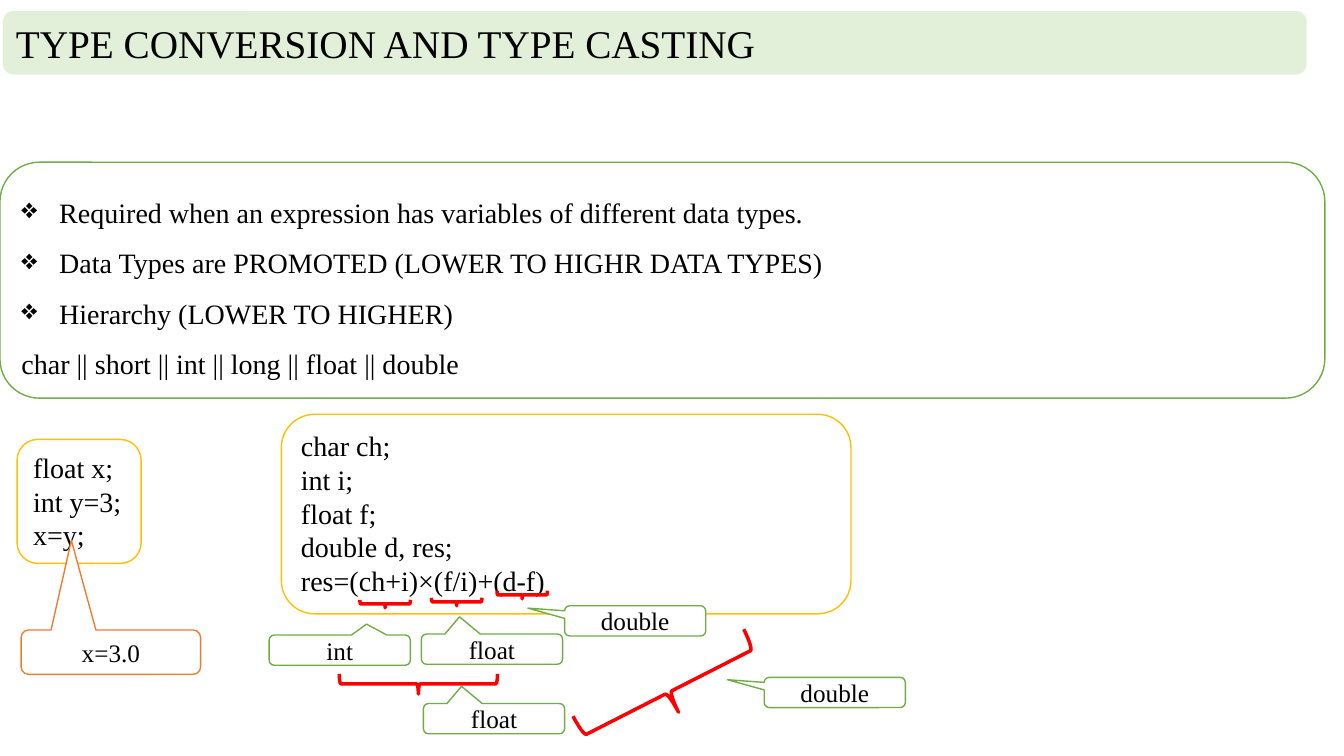
from lxml.etree import SubElement
from pptx import Presentation
from pptx.dml.color import RGBColor
from pptx.enum.shapes import MSO_SHAPE
from pptx.enum.text import MSO_ANCHOR, MSO_AUTO_SIZE, PP_ALIGN
from pptx.oxml.ns import qn
from pptx.util import Inches, Pt

FONT = "Times New Roman"
COLORS = {
    "text": "000000",
    "title": "E2F0D9",
    "callout": "FFFFFF",
    "green": "70AD47",
    "gold": "FFC000",
    "orange": "ED7D31",
    "brace": "FF0000",
}
CALLOUT_SIZE = (14, 3)
RULES = [
    "Required when an expression has variables of different data types.",
    "Data Types are PROMOTED (LOWER TO HIGHR DATA TYPES)",
    "Hierarchy (LOWER TO HIGHER)",
]
HIERARCHY = "char || short || int || long || float || double"
ASSIGNMENT = ["float x;", "int y=3;", "x=y;"]
EXPRESSION = ["char ch;", "int i;", "float f;", "double d, res;",
              "res=(ch+i)×(f/i)+(d-f)"]


def grid(cells):
    """Length of a number of columns or rows, each a tenth of an inch."""
    return Inches(cells / 10)


def color(name):
    return RGBColor.from_string(COLORS[name])


def add_outline(slide, kind, place, fill=None, line=None, weight=1):
    outline = slide.shapes.add_shape(kind, *map(grid, place))
    outline.shadow.inherit = False
    if fill:
        outline.fill.solid()
        outline.fill.fore_color.rgb = color(fill)
    else:
        outline.fill.background()
    if line:
        outline.line.color.rgb = color(line)
        outline.line.width = Pt(weight)
    else:
        outline.line.fill.background()
    return outline


def write(paragraph, text, size=20, align=PP_ALIGN.LEFT, spacing=None, bullet=None):
    paragraph.alignment = align
    if spacing:
        paragraph.line_spacing = spacing
    if bullet:
        properties = paragraph._p.get_or_add_pPr()
        indent = grid(3.75)
        properties.set("marL", str(indent))
        properties.set("indent", str(-indent))
        SubElement(properties, qn("a:buChar")).set("char", bullet)
    run = paragraph.add_run()
    run.text = text
    run.font.name = FONT
    run.font.size = Pt(size)
    run.font.color.rgb = color("text")


def add_panel(slide, place, lines, fill=None, line=None, bullets=0, **text_format):
    """Rounded panel whose first lines, as many as bullets says, are bulleted."""
    panel = add_outline(slide, MSO_SHAPE.FLOWCHART_ALTERNATE_PROCESS,
                        place, fill, line)
    frame = panel.text_frame
    frame.word_wrap = True
    frame.auto_size = MSO_AUTO_SIZE.SHAPE_TO_FIT_TEXT
    frame.vertical_anchor = MSO_ANCHOR.TOP
    for index, text in enumerate(lines):
        paragraph = frame.add_paragraph() if index else frame.paragraphs[0]
        write(paragraph, text, bullet="❖" if index < bullets else None, **text_format)


def add_callout(slide, text, corner, tail, size=CALLOUT_SIZE, line="green"):
    callout = add_outline(slide, MSO_SHAPE.ROUNDED_RECTANGULAR_CALLOUT,
                          (*corner, *size), "callout", line)
    callout.adjustments[0], callout.adjustments[1] = tail
    frame = callout.text_frame
    frame.word_wrap = True
    frame.vertical_anchor = MSO_ANCHOR.MIDDLE
    write(frame.paragraphs[0], text, size=18, align=PP_ALIGN.CENTER)


def add_brace(slide, center, depth, span, rotation=270):
    x, y = center
    brace = add_outline(slide, MSO_SHAPE.LEFT_BRACE,
                        (x - depth / 2, y - span / 2, depth, span),
                        line="brace", weight=2.5)
    brace.rotation = rotation


def main():
    presentation = Presentation()
    presentation.slide_width = Inches(13.33)
    presentation.slide_height = Inches(7.5)
    slide = presentation.slides.add_slide(presentation.slide_layouts[6])

    # Title and conversion rules
    add_panel(slide, (0.3, 1.1, 129.3, 6.3), ["TYPE CONVERSION AND TYPE CASTING"],
              fill="title", size=28)
    add_panel(slide, (0, 16.1, 131.4, 23.4), RULES + [HIERARCHY],
              line="green", bullets=len(RULES), spacing=1.5)

    # Assignment example
    add_panel(slide, (1.7, 43.6, 12.3, 12.3), ASSIGNMENT, line="gold")
    add_callout(slide, "x=3.0", (2.1, 62.5), (-0.22, -2.52),
                size=(17.8, 4.4), line="orange")

    # Expression example
    add_panel(slide, (27.9, 41.1, 56.5, 19.8), EXPRESSION, line="gold")

    # Braces under the three terms, then under the combined results
    for center in ((38.2, 59.9), (45.3, 59.7), (51.8, 59)):
        add_brace(slide, center, depth=0.8, span=5)
    add_brace(slide, (41.5, 67.85), depth=2, span=15.7)
    add_brace(slide, (66.3, 68.7), depth=4.4, span=19, rotation=243)

    # Resulting types
    tail_up, tail_left = (-0.23, -1.07), (-0.76, -0.42)
    for result, corner, tail in (
        ("int", (26.7, 63), (0.19, -0.86)),
        ("float", (41.8, 62.9), tail_up),
        ("double", (56, 60.1), tail_left),
        ("float", (42, 69.8), tail_up),
        ("double", (75.8, 67.2), tail_left),
    ):
        add_callout(slide, result, corner, tail)

    presentation.save("out.pptx")


if __name__ == "__main__":
    main()
